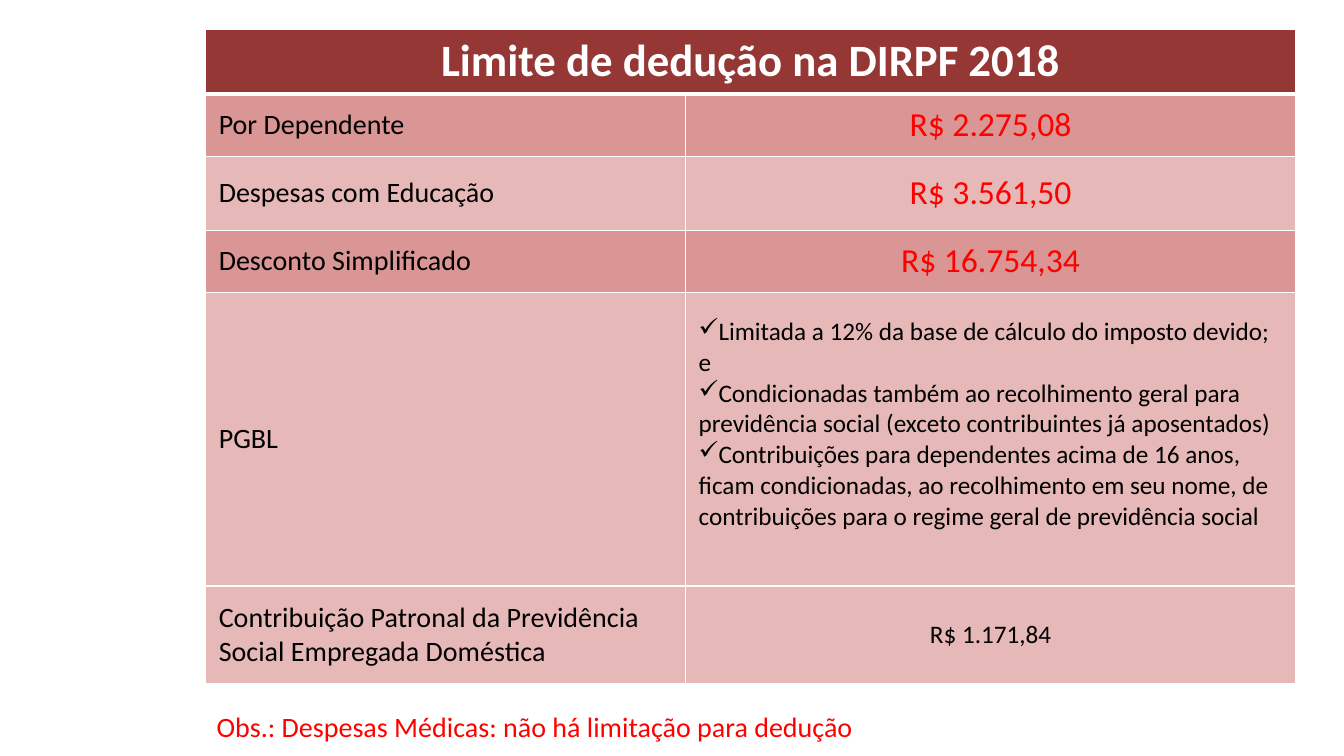
from lxml import etree
from pptx import Presentation
from pptx.dml.color import RGBColor
from pptx.enum import shapes, text
from pptx.oxml import ns
from pptx.util import Inches, Pt

WHITE = RGBColor(0xFF, 0xFF, 0xFF)
BLACK = RGBColor(0, 0, 0)
RED = RGBColor(0xFF, 0, 0)
MAROON = RGBColor(0x95, 0x37, 0x35)
ROSE = RGBColor(0xD9, 0x96, 0x94)
PINK = RGBColor(0xE6, 0xB9, 0xB8)
FONT = "Calibri"

HEADING = "Limite de dedução na DIRPF 2018"
PGBL_RULES = [
    "Limitada a 12% da base de cálculo do imposto devido; e",
    "Condicionadas também ao recolhimento geral para previdência social "
    "(exceto contribuintes já aposentados)",
    "Contribuições para dependentes acima de 16 anos, ficam condicionadas, "
    "ao recolhimento em seu nome, de contribuições para o regime geral de "
    "previdência social",
]
LIMITS = [
    ("Por Dependente", ["R$ 2.275,08"], 24, RED, ROSE, 0.62),
    ("Despesas com Educação", ["R$ 3.561,50"], 24, RED, PINK, 0.73),
    ("Desconto Simplificado", ["R$ 16.754,34"], 24, RED, ROSE, 0.62),
    ("PGBL", PGBL_RULES, 18, BLACK, PINK, 2.91),
    ("Contribuição Patronal da Previdência Social Empregada Doméstica",
     ["R$ 1.171,84"], 18, BLACK, PINK, 0.97),
]
NOTE = "Obs.: Despesas Médicas: não há limitação para dedução"
COLUMN_WIDTHS = [4.76, 6.05]
HEADING_HEIGHT = 0.63


def write(frame, lines, size, color, align, bold=False, bullet=None):
    frame.text = "\n".join(lines)
    for para in frame.paragraphs:
        para.alignment = align
        if bullet:
            props = para._p.get_or_add_pPr()
            props.set("marL", "0")
            props.set("indent", "0")
            etree.SubElement(props, ns.qn("a:buChar")).set("char", bullet)
        for span in para.runs:
            span.font.name = FONT
            span.font.size = Pt(size)
            span.font.bold = bold
            span.font.color.rgb = color


def style_cell(cell, fill, top=1, bottom=1):
    cell.vertical_anchor = text.MSO_ANCHOR.MIDDLE
    cell.margin_left = cell.margin_right = Inches(0.13)
    cell.margin_top = cell.margin_bottom = Inches(0.05)
    cell.fill.solid()
    cell.fill.fore_color.rgb = fill
    props = cell._tc.get_or_add_tcPr()
    edges = [("L", 1), ("R", 1), ("T", top), ("B", bottom)]
    for position, (side, width) in enumerate(edges):
        line = etree.Element(ns.qn(f"a:ln{side}"), w=str(Pt(width)))
        paint = etree.SubElement(line, ns.qn("a:solidFill"))
        etree.SubElement(paint, ns.qn("a:srgbClr")).set("val", str(WHITE))
        props.insert(position, line)


def add_limits_table(page):
    heights = [HEADING_HEIGHT] + [limit[-1] for limit in LIMITS]
    table = page.shapes.add_table(
        len(heights), len(COLUMN_WIDTHS), Inches(2.04), Inches(0.29),
        Inches(sum(COLUMN_WIDTHS)), Inches(sum(heights))).table
    for column, width in zip(table.columns, COLUMN_WIDTHS):
        column.width = Inches(width)
    for row, height in zip(table.rows, heights):
        row.height = Inches(height)

    heading = table.cell(0, 0)
    heading.merge(table.cell(0, 1))
    for cell in table.rows[0].cells:
        style_cell(cell, MAROON, bottom=3)
    write(heading.text_frame, [HEADING], 32, WHITE, text.PP_ALIGN.CENTER, bold=True)

    for index, (label, lines, size, color, fill, _) in enumerate(LIMITS, 1):
        name_cell, value_cell = table.rows[index].cells
        for cell in (name_cell, value_cell):
            style_cell(cell, fill, top=3 if index == 1 else 1)
        write(name_cell.text_frame, [label], 20, BLACK, text.PP_ALIGN.LEFT)
        if len(lines) > 1:
            write(value_cell.text_frame, lines, size, color,
                  text.PP_ALIGN.LEFT, bullet="✓")
            value_cell.margin_bottom = Inches(0.35)
        else:
            write(value_cell.text_frame, lines, size, color, text.PP_ALIGN.CENTER)


def add_note(page):
    note = page.shapes.add_shape(
        shapes.MSO_SHAPE.RECTANGLE,
        Inches(2.05), Inches(7.1), Inches(7.58), Inches(0.22))
    note.shadow.inherit = False
    note.fill.solid()
    note.fill.fore_color.rgb = WHITE
    note.line.color.rgb = WHITE
    note.line.width = Pt(1)
    note.text_frame.word_wrap = True
    note.text_frame.vertical_anchor = text.MSO_ANCHOR.MIDDLE
    write(note.text_frame, [NOTE], 20, RED, text.PP_ALIGN.JUSTIFY)


def main():
    deck = Presentation()
    deck.slide_width = Inches(13.33)
    deck.slide_height = Inches(7.5)
    page = deck.slides.add_slide(deck.slide_layouts[6])
    add_limits_table(page)
    add_note(page)
    deck.save("out.pptx")


if __name__ == "__main__":
    main()
